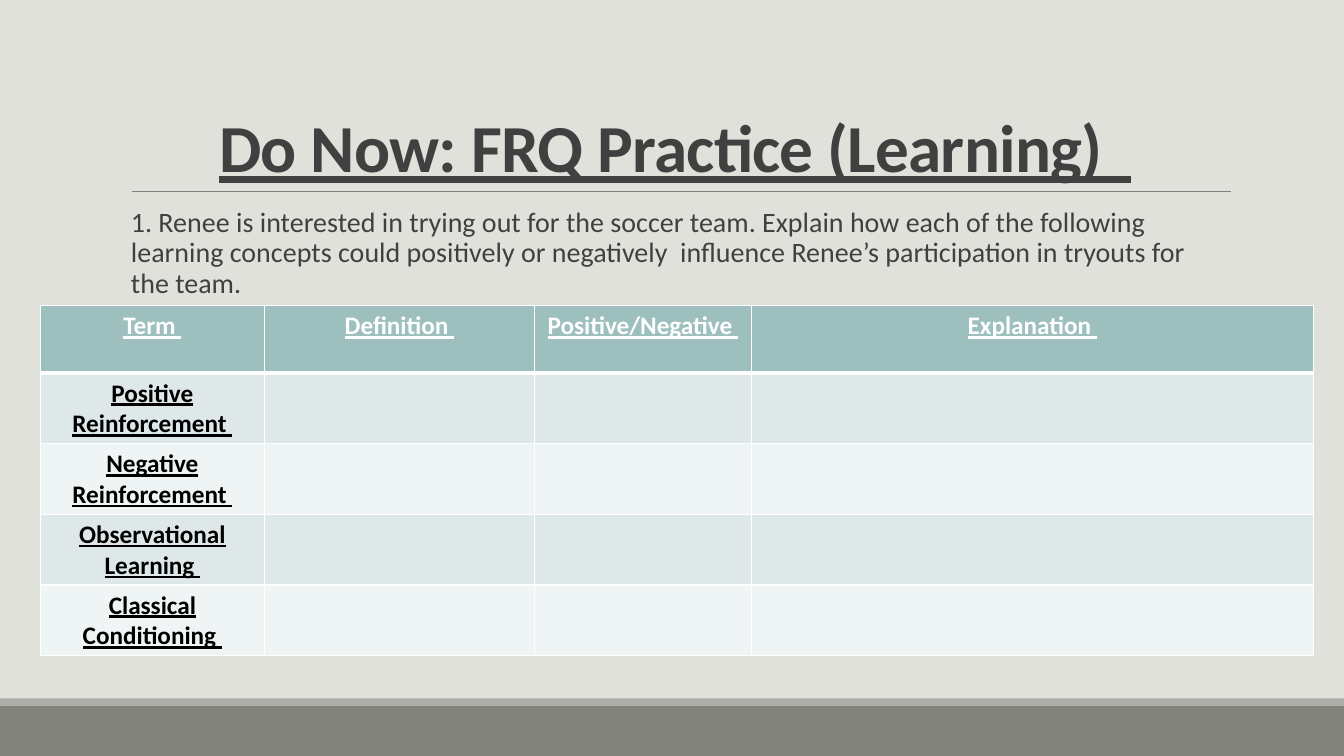
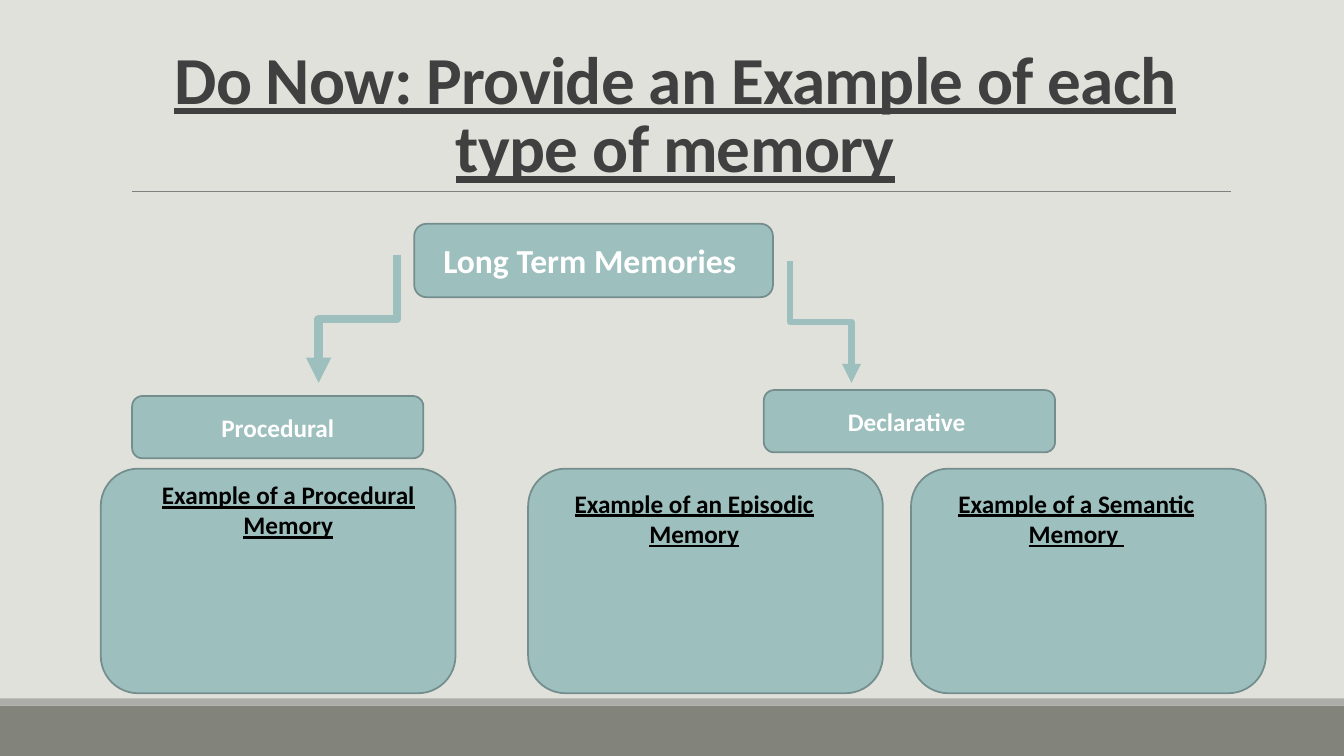
from dataclasses import dataclass

from lxml.etree import SubElement
from pptx import Presentation
from pptx.dml.color import RGBColor
from pptx.enum.shapes import MSO_CONNECTOR as Connector, MSO_SHAPE as Preset
from pptx.enum.text import MSO_ANCHOR as Anchor, PP_ALIGN as Align
from pptx.oxml.ns import qn
from pptx.util import Cm, Pt


@dataclass(frozen=True)
class Theme:
    font: str = "Calibri"
    background: str = "E1E1DB"
    band: str = "82847C"
    strip: str = "ACADA8"
    rule: str = "808080"
    ink: str = "404040"
    accent: str = "9DBFBE"
    outline: str = "748D8D"
    white: str = "FFFFFF"
    black: str = "000000"
    row_fills: tuple = ("DFE8E8", "EFF4F4")
    title_size: int = 48
    heading_size: int = 24
    body_size: int = 20
    label_size: int = 18


theme = Theme()


def write(text_frame, text, size, color, bold=True, underline=False, align=Align.CENTER):
    """Fill the frame with one formatted paragraph and return it."""
    text_frame.word_wrap = True
    text_frame.text = text
    paragraph = text_frame.paragraphs[0]
    paragraph.alignment = align
    font = paragraph.runs[0].font
    font.name, font.size = theme.font, Pt(size)
    font.bold, font.underline = bold, underline
    font.color.rgb = RGBColor.from_string(color)
    return paragraph


def add_box(slide, preset, left, top, width, height, fill, line=None):
    """Add a flat filled shape, measured in centimetres."""
    shape = slide.shapes.add_shape(preset, Cm(left), Cm(top), Cm(width), Cm(height))
    shape.shadow.inherit = False
    shape.fill.solid()
    shape.fill.fore_color.rgb = RGBColor.from_string(fill)
    if line:
        shape.line.color.rgb = RGBColor.from_string(line)
        shape.line.width = Pt(1.25)
    else:
        shape.line.fill.background()
    return shape


presentation = Presentation()
presentation.slide_width = Cm(33.87)
presentation.slide_height = Cm(19.05)

# Shared frame of both slides
titles = (
    "Do Now: FRQ Practice (Learning)  ",
    "Do Now: Provide an Example of each type of memory",
)
slides = []
for title in titles:
    slide = presentation.slides.add_slide(presentation.slide_layouts[6])
    slide.background.fill.solid()
    slide.background.fill.fore_color.rgb = RGBColor.from_string(theme.background)
    add_box(slide, Preset.RECTANGLE, 0, 17.78, 33.87, 1.27, theme.band)
    add_box(slide, Preset.RECTANGLE, 0, 17.6, 33.87, 0.18, theme.strip)

    rule = slide.shapes.add_connector(
        Connector.STRAIGHT, Cm(3.33), Cm(4.83), Cm(31.01), Cm(4.83))
    rule.line.color.rgb = RGBColor.from_string(theme.rule)
    rule.line.width = Pt(0.5)
    SubElement(rule.element.spPr, qn("a:effectLst"))

    title_box = slide.shapes.add_textbox(Cm(3.05), Cm(0.79), Cm(27.94), Cm(4.04))
    title_box.text_frame.vertical_anchor = Anchor.BOTTOM
    paragraph = write(title_box.text_frame, title, theme.title_size, theme.ink, underline=True)
    paragraph.line_spacing = 0.85
    paragraph.runs[0].font._element.set("spc", "-50")
    slides.append(slide)

practice_slide, memory_slide = slides

# Practice question
question_box = practice_slide.shapes.add_textbox(Cm(3.05), Cm(5.13), Cm(27.94), Cm(11.18))
question_box.text_frame.margin_right = 0
paragraph = write(
    question_box.text_frame,
    "1. Renee is interested in trying out for the soccer team. Explain how each of the "
    "following learning concepts could positively or negatively  influence Renee’s "
    "participation in tryouts for the team.",
    theme.body_size, theme.ink, bold=False, align=Align.LEFT)
paragraph.line_spacing = 0.9
paragraph.space_before, paragraph.space_after = Pt(12), Pt(2)

# Answer table
headers = ("Term ", "Definition ", "Positive/Negative ", "Explanation ")
terms = ("Positive Reinforcement ", "Negative Reinforcement ",
         "Observational Learning ", "Classical Conditioning ")
rows = [headers] + [(term, "", "", "") for term in terms]
column_widths = (5.64, 6.81, 5.46, 14.17)
row_heights = [1.7] + [1.78] * len(terms)

table = practice_slide.shapes.add_table(
    len(rows), len(headers), Cm(1.02), Cm(7.7),
    Cm(sum(column_widths)), Cm(sum(row_heights))).table
for column, width in zip(table.columns, column_widths):
    column.width = Cm(width)
for row_index, (texts, height) in enumerate(zip(rows, row_heights)):
    table.rows[row_index].height = Cm(height)
    is_header = row_index == 0
    fill = theme.accent if is_header else theme.row_fills[(row_index - 1) % 2]
    color = theme.white if is_header else theme.black
    border_widths = {"lnL": 1, "lnR": 1,
                     "lnT": 3 if row_index == 1 else 1,
                     "lnB": 3 if is_header else 1}
    for column_index, text in enumerate(texts):
        cell = table.cell(row_index, column_index)
        properties = cell._tc.get_or_add_tcPr()
        for side, border_width in border_widths.items():
            border = SubElement(properties, qn(f"a:{side}"), w=str(Pt(border_width)))
            border_fill = SubElement(border, qn("a:solidFill"))
            SubElement(border_fill, qn("a:srgbClr"), val=theme.white)
        cell.fill.solid()
        cell.fill.fore_color.rgb = RGBColor.from_string(fill)
        if text:
            write(cell.text_frame, text, theme.label_size, color, underline=True)

# Memory tree
memory_types = (
    ("Long Term Memories ", 10.44, 5.64, 9.04, 1.85, theme.heading_size),
    ("Procedural", 3.33, 9.98, 7.34, 1.57, theme.label_size),
    ("Declarative ", 19.25, 9.83, 7.34, 1.57, theme.label_size),
)
for text, left, top, width, height, size in memory_types:
    box = add_box(memory_slide, Preset.ROUNDED_RECTANGLE, left, top, width, height,
                  theme.accent, theme.outline)
    box.text_frame.vertical_anchor = Anchor.MIDDLE
    write(box.text_frame, text, size, theme.white)

# Elbow arrows leave downwards, so each is laid out sideways and turned a quarter
arrows = (
    (10.01, 6.43, 8.03, 9.65, 6),
    (19.91, 6.58, 21.46, 9.65, 4.5),
)
for start_x, start_y, end_x, end_y, weight in arrows:
    center_x, center_y = (start_x + end_x) / 2, (start_y + end_y) / 2
    half_length, half_span = (end_y - start_y) / 2, abs(end_x - start_x) / 2
    goes_right = end_x > start_x
    direction = -1 if goes_right else 1
    arrow = memory_slide.shapes.add_connector(
        Connector.ELBOW,
        Cm(center_x - direction * half_length), Cm(center_y - half_span),
        Cm(center_x + direction * half_length), Cm(center_y + half_span))
    quarter_turns = 3 if goes_right else 1
    arrow.element.spPr.xfrm.set("rot", str(quarter_turns * 90 * 60000))
    arrow.line.color.rgb = RGBColor.from_string(theme.accent)
    arrow.line.width = Pt(weight)
    SubElement(arrow.line._get_or_add_ln(), qn("a:tailEnd"), type="triangle")
    SubElement(arrow.element.spPr, qn("a:effectLst"))

# Example cards
examples = (
    ("Example of a Procedural Memory", 2.54, 3.05, 11.96),
    ("Example of an Episodic Memory", 13.31, 13.28, 12.17),
    ("Example of a Semantic Memory ", 22.96, 22.91, 12.17),
)
for text, card_left, label_left, label_top in examples:
    add_box(memory_slide, Preset.ROUNDED_RECTANGLE, card_left, 11.81, 8.94, 5.66,
            theme.accent, theme.outline)
    label = memory_slide.shapes.add_textbox(
        Cm(label_left), Cm(label_top), Cm(8.43), Cm(1.8))
    write(label.text_frame, text, theme.label_size, theme.black, underline=True)

presentation.save("out.pptx")
